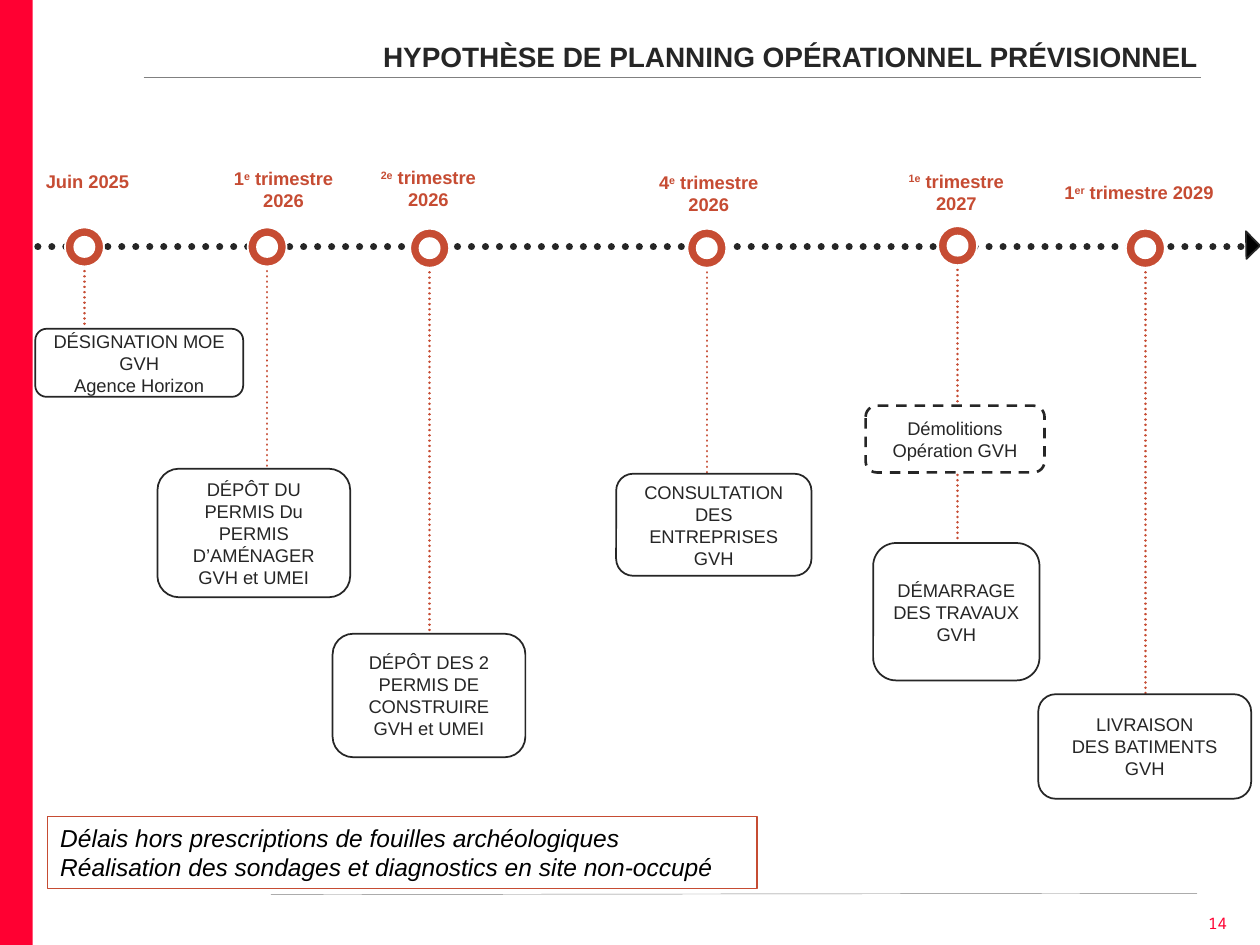
from lxml import etree
from pptx import Presentation
from pptx.dml.color import RGBColor
from pptx.enum.dml import MSO_LINE
from pptx.enum.shapes import MSO_CONNECTOR, MSO_SHAPE
from pptx.enum.text import MSO_ANCHOR, MSO_AUTO_SIZE, PP_ALIGN
from pptx.oxml.ns import qn
from pptx.util import Inches, Pt

LEFT, CENTER, RIGHT = PP_ALIGN.LEFT, PP_ALIGN.CENTER, PP_ALIGN.RIGHT
TOP, MIDDLE = MSO_ANCHOR.TOP, MSO_ANCHOR.MIDDLE
DOT, DASH = MSO_LINE.ROUND_DOT, MSO_LINE.DASH
RECT, ROUND, OVAL = MSO_SHAPE.RECTANGLE, MSO_SHAPE.ROUNDED_RECTANGLE, MSO_SHAPE.OVAL
TRIANGLE = MSO_SHAPE.RIGHT_TRIANGLE
STRAIGHT = MSO_CONNECTOR.STRAIGHT
INK, RUST, RED, WHITE, BLACK, GREY = "262626", "C64C33", "FF0032", "FFFFFF", "000000", "808080"


def rgb(value):
    return RGBColor.from_string(value)


class Deck:
    font = "Arial"
    size = 10.5

    def __init__(self, width, height):
        self.prs = Presentation()
        self.prs.slide_width, self.prs.slide_height = Inches(width), Inches(height)
        self.s = None

    def add_slide(self):
        self.s = self.prs.slides.add_slide(self.prs.slide_layouts[5])

    def fill_text(self, tf, lines, color, size=None, align=CENTER, bold=False,
                  italic=False, font=None):
        """Each line is a string, or a list of (text, raised) pairs."""
        for i, line in enumerate(lines):
            p = tf.paragraphs[0] if i == 0 else tf.add_paragraph()
            p.alignment = align
            p.space_before = Pt(0)
            f = p.font
            f.name, f.size = font or self.font, Pt(size or self.size)
            f.bold, f.italic = bold, italic
            f.color.rgb = rgb(color)
            for text, raised in [(line, False)] if isinstance(line, str) else line:
                r = p.add_run()
                r.text = text
                if raised:
                    r.font._element.set("baseline", "30000")

    def title(self, text, x, y, w, h):
        sp = self.s.shapes.title
        sp.left, sp.top, sp.width, sp.height = map(Inches, (x, y, w, h))
        tf = sp.text_frame
        tf.auto_size, tf.vertical_anchor = MSO_AUTO_SIZE.NONE, TOP
        self.fill_text(tf, [text], INK, 16, RIGHT, bold=True)

    def text(self, lines, x, y, w, h, color, wrap=False, **style):
        sp = self.s.shapes.add_textbox(*map(Inches, (x, y, w, h)))
        sp.text_frame.word_wrap = wrap
        self.fill_text(sp.text_frame, lines, color, **style)

    def shape(self, kind, x, y, w, h, fill=None, line=None, weight=1.0, dash=None):
        sp = self.s.shapes.add_shape(kind, *map(Inches, (x, y, w, h)))
        sp.shadow.inherit = False
        if fill:
            sp.fill.solid()
            sp.fill.fore_color.rgb = rgb(fill)
        else:
            sp.fill.background()
        if line:
            sp.line.color.rgb, sp.line.width = rgb(line), Pt(weight)
            if dash:
                sp.line.dash_style = dash
        else:
            sp.line.fill.background()
        return sp

    def box(self, lines, x, y, w, h, fill=WHITE, weight=1.0, dash=None):
        tf = self.shape(ROUND, x, y, w, h, fill, INK, weight, dash).text_frame
        tf.word_wrap, tf.vertical_anchor = True, MIDDLE
        self.fill_text(tf, lines, INK)

    def line(self, x1, y1, x2, y2, color, weight, dash=None):
        c = self.s.shapes.add_connector(STRAIGHT, *map(Inches, (x1, y1, x2, y2)))
        c.line.color.rgb, c.line.width = rgb(color), Pt(weight)
        if dash:
            c.line.dash_style = dash
            c.line._get_or_add_ln().set("cap", "rnd")
        etree.SubElement(c._element.spPr, qn("a:effectLst"))

    def ring(self, x, y):
        for d, fill in ((0.31, RUST), (0.16, WHITE)):
            self.shape(OVAL, x - d / 2, y - d / 2, d, d, fill, WHITE)


def main():
    deck = Deck(10, 7.5)
    deck.add_slide()

    # Frame: red band, rules, title, page number
    deck.line(1.14, 0.61, 9.53, 0.61, GREY, 0.25)
    deck.line(2.15, 7.1, 9.5, 7.09, GREY, 0.25)
    deck.shape(RECT, 0, 0, 0.26, 7.5, RED)
    deck.title("HYPOTHÈSE DE PLANNING OPÉRATIONNEL PRÉVISIONNEL", 2.5, 0.26, 7.11, 0.42)
    deck.text(["14"], 9.49, 7.2, 0.72, 0.37, RED, wrap=True, size=9, align=LEFT,
              font="Noto Sans Mono")

    # Time axis with its arrowhead
    deck.line(0.3, 1.96, 9.9, 1.96, INK, 4, DOT)
    deck.shape(TRIANGLE, 9.81, 1.87, 0.16, 0.15, BLACK, INK).rotation = 225.8

    # Milestones: centre of ring, end of stem
    milestones = [
        (0.67, 1.96, 2.6), (2.12, 1.96, 3.75), (3.41, 1.97, 5.02),
        (5.61, 1.97, 4.15), (7.6, 1.95, 4.31), (9.09, 1.97, 5.51),
    ]
    for x, y, end in milestones:
        deck.line(x, y + 0.15, x, end, RUST, 1.5, DOT)
        deck.ring(x, y)

    # Dates
    quarter = (" trimestre", False)
    dates = [
        (["Juin 2025"], 0.26, 1.3, 0.87, 0.28),
        ([[("1", False), ("e", True), quarter], "2026"], 1.69, 1.28, 1.12, 0.45),
        ([[("2e", True), quarter], "2026"], 2.91, 1.27, 0.98, 0.45),
        ([[("4", False), ("e", True), quarter], "2026"], 5.12, 1.31, 1.01, 0.45),
        ([[("1e", True), quarter], "2027"], 7.1, 1.3, 0.98, 0.45),
        ([[("1", False), ("er", True), (" trimestre 2029", False)]], 8.29, 1.39, 1.5, 0.28),
    ]
    for lines, *place in dates:
        deck.text(lines, *place, RUST, bold=True)

    # Steps
    deck.box(["DÉSIGNATION MOE GVH", "Agence Horizon"], 0.28, 2.61, 1.65, 0.54)
    deck.box(["DÉPÔT DU PERMIS Du PERMIS D’AMÉNAGER", "GVH et UMEI"], 1.25, 3.72, 1.53, 1.02)
    deck.box(["DÉPÔT DES 2 PERMIS DE CONSTRUIRE", "GVH et UMEI"], 2.64, 5.03, 1.53, 0.98,
             fill=None)
    deck.box(["CONSULTATION DES ENTREPRISES GVH"], 4.89, 3.76, 1.55, 0.81)
    deck.box(["Démolitions", "Opération GVH"], 6.87, 3.22, 1.42, 0.53, weight=1.5, dash=DASH)
    deck.box(["DÉMARRAGE DES TRAVAUX", "GVH"], 6.93, 4.31, 1.32, 1.09)
    deck.box(["LIVRAISON", "DES BATIMENTS", "GVH"], 8.24, 5.51, 1.69, 0.83)

    # Note on delays
    note = deck.shape(RECT, 0.38, 6.48, 5.63, 0.57, None, RUST, 0.75).text_frame
    note.word_wrap, note.vertical_anchor = True, TOP
    deck.fill_text(note, ["Délais hors prescriptions de fouilles archéologiques",
                          "Réalisation des sondages et diagnostics en site non-occupé"],
                   BLACK, 14, LEFT, italic=True)

    deck.prs.save("out.pptx")


if __name__ == "__main__":
    main()
